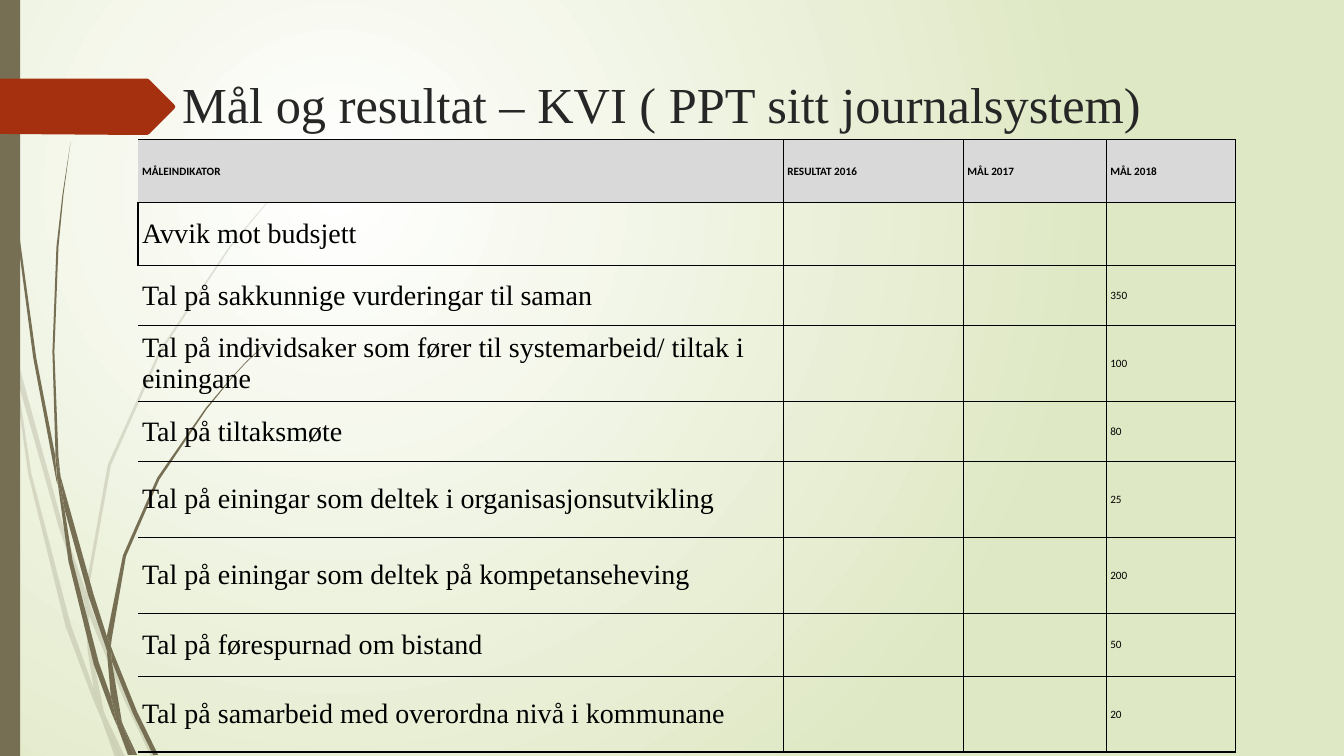
import pptx
import pptx.dml.color
import pptx.enum.shapes
import pptx.enum.text
import pptx.oxml
import pptx.oxml.ns
import pptx.util
from lxml import etree

Cm = pptx.util.Cm
Pt = pptx.util.Pt
qn = pptx.oxml.ns.qn

COLORS = {
    "glow": "FFFFFF", "meadow": "DFE8C4", "grass": "766F54", "tag": "A53010",
    "title": "262626", "ink": "000000", "header": "D9D9D9",
}
SERIF, SANS = "Times New Roman", "Calibri"
HUNDREDTH_INCH = int(Cm(2.54) / 100)

PALE_GRASS = [
    [(11, 350), (9, 322), (0, 282), (0, 299), (10, 344)],
    [(58, 522), (84, 599), (85, 586), (62, 520), (14, 345), (17, 376)],
    [(92, 607), (88, 596), (88, 610), (123, 694), (150, 751), (155, 751), (127, 692)],
    [(119, 751), (124, 751), (105, 711)],
    [(93, 683), (70, 619), (31, 469), (17, 376), (11, 350), (28, 470), (65, 621),
     (92, 693), (101, 714), (99, 707)],
    [(84, 599), (87, 646), (93, 683), (96, 692), (105, 711), (103, 706), (91, 646),
     (88, 610), (88, 608)],
    [(88, 584), (110, 462), (160, 349), (229, 245), (268, 198), (290, 175), (312, 154),
     (312, 153), (289, 175), (268, 197), (228, 244), (158, 348), (107, 461), (85, 584),
     (85, 586), (88, 596)],
    [(101, 714), (114, 751), (119, 751)],
    [(88, 608), (88, 610), (88, 596), (85, 586), (84, 599)],
    [(96, 692), (93, 683), (99, 707), (101, 714), (119, 751), (105, 711)],
]
DARK_GRASS = [
    [(7, 110), (17, 233), (33, 355), (56, 477), (57, 481), (55, 457), (55, 453), (36, 355),
     (19, 232), (8, 109), (5, 48), (4, 0), (3, 0), (4, 48)],
    [(88, 592), (106, 645), (106, 633), (106, 631), (93, 590), (60, 472), (64, 505)],
    [(113, 649), (110, 641), (111, 656), (132, 708), (152, 749), (157, 749), (136, 706)],
    [(110, 691), (98, 657), (72, 556), (64, 505), (57, 477), (68, 557), (93, 659),
     (111, 708), (117, 722), (116, 717)],
    [(60, 472), (58, 453), (54, 349), (58, 245), (63, 193), (70, 141), (62, 193), (56, 245),
     (52, 349), (55, 449)],
    [(133, 749), (136, 749), (122, 719)],
    [(57, 477), (64, 505), (60, 472), (55, 449), (55, 453)],
    [(111, 633), (125, 552), (158, 476), (205, 406), (231, 374), (245, 359), (261, 344),
     (260, 344), (245, 358), (231, 373), (204, 405), (156, 474), (122, 551), (106, 631),
     (110, 641)],
    [(117, 722), (127, 749), (131, 749)],
    [(106, 645), (110, 691), (116, 706), (122, 719), (121, 716), (111, 656), (109, 651)],
    [(106, 645), (109, 651), (111, 656), (110, 641), (106, 631), (106, 633)],
    [(116, 706), (110, 691), (116, 717), (117, 722), (130, 749), (133, 749), (122, 719)],
]
TAG_OUTLINE = [(0, 0), (146, 0), (148, 1), (173, 26), (174, 28), (173, 30), (148, 55),
               (146, 56), (136, 56), (0, 55)]

COLUMN_WIDTHS = [16.26, 4.54, 3.6, 3.25]
ROW_HEIGHTS = [1.59, 1.59, 1.51, 1.91, 1.51, 1.91, 1.91, 1.59, 1.91]
HEADINGS = ["MÅLEINDIKATOR", "RESULTAT 2016", "MÅL 2017", "MÅL 2018"]
GOALS_2018 = [
    ("Avvik mot budsjett", ""),
    ("Tal på sakkunnige vurderingar til saman", "350"),
    ("Tal på individsaker som fører til systemarbeid/ tiltak i einingane", "100"),
    ("Tal på tiltaksmøte", "80"),
    ("Tal på einingar som deltek i organisasjonsutvikling", "25"),
    ("Tal på einingar som deltek på kompetanseheving", "200"),
    ("Tal på førespurnad om bistand", "50"),
    ("Tal på samarbeid med overordna nivå i kommunane", "20"),
]


def rgb(name):
    return pptx.dml.color.RGBColor.from_string(COLORS[name])


def paint(shape, color, opacity=100):
    shape.shadow.inherit = False
    shape.fill.solid()
    shape.fill.fore_color.rgb = rgb(color)
    shape.line.fill.background()
    if opacity < 100:
        tint = shape.element.spPr.find(".//" + qn("a:srgbClr"))
        etree.SubElement(tint, qn("a:alpha"), val=str(opacity * 1000))


def style_run(run, font, size, color, bold=False):
    run.font.name = font
    run.font.size = Pt(size)
    run.font.bold = bold
    run.font.color.rgb = rgb(color)


def draw_background(slide):
    fill = slide.background.fill
    fill.gradient()
    for stop, color in zip(fill.gradient_stops, ("glow", "meadow")):
        stop.color.rgb = rgb(color)
    gradient = slide.element.find(".//" + qn("a:gradFill"))
    gradient.remove(gradient.find(qn("a:lin")))
    glow = etree.SubElement(gradient, qn("a:path"), {"path": "circle"})
    etree.SubElement(glow, qn("a:fillToRect"), l="50000", t="50000", r="100000", b="100000")


def draw_outline(slide, left, top, points, color, opacity=100):
    builder = slide.shapes.build_freeform(*points[0], scale=HUNDREDTH_INCH)
    builder.add_line_segments(points[1:], close=True)
    paint(builder.convert_to_shape(left, top), color, opacity)


def draw_side_decor(slide, left, top, height):
    for blades, opacity in ((PALE_GRASS, 20), (DARK_GRASS, 100)):
        for blade in blades:
            draw_outline(slide, left, top, blade, "grass", opacity)
    edge = slide.shapes.add_shape(
        pptx.enum.shapes.MSO_SHAPE.RECTANGLE, left, top, Cm(0.51), height)
    paint(edge, "grass")
    draw_outline(slide, left, top + Cm(1.98), TAG_OUTLINE, "tag")


def draw_title(slide, left, top, width, height):
    frame = slide.shapes.add_textbox(left, top, width, height).text_frame
    frame.word_wrap = True
    frame.vertical_anchor = pptx.enum.text.MSO_ANCHOR.TOP
    frame.text = "Mål og resultat – KVI ( PPT sitt journalsystem)"
    style_run(frame.paragraphs[0].runs[0], SERIF, 36, "title")


def border_cell(cell, has_left):
    properties = cell._tc.get_or_add_tcPr()
    for index, side in enumerate(("lnL", "lnR", "lnT", "lnB")):
        line = etree.Element(qn("a:" + side), w=str(Pt(1)))
        if side == "lnL" and not has_left:
            etree.SubElement(line, qn("a:noFill"))
        else:
            solid = etree.SubElement(line, qn("a:solidFill"))
            etree.SubElement(solid, qn("a:srgbClr"), val=COLORS["ink"])
        properties.insert(index, line)


def draw_goal_table(slide, left, top):
    rows = [HEADINGS] + [[indicator, "", "", goal] for indicator, goal in GOALS_2018]
    table = slide.shapes.add_table(
        len(rows), len(HEADINGS), left, top,
        Cm(sum(COLUMN_WIDTHS)), Cm(sum(ROW_HEIGHTS))).table
    table.first_row = False
    table.horz_banding = False
    for column, width in zip(table.columns, COLUMN_WIDTHS):
        column.width = Cm(width)
    for row, height in zip(table.rows, ROW_HEIGHTS):
        row.height = Cm(height)
    for r, texts in enumerate(rows):
        for c, text in enumerate(texts):
            cell = table.cell(r, c)
            cell.margin_left = cell.margin_right = Cm(0.1)
            cell.margin_top = cell.margin_bottom = 0
            cell.vertical_anchor = pptx.enum.text.MSO_ANCHOR.MIDDLE
            if r == 0:
                cell.fill.solid()
                cell.fill.fore_color.rgb = rgb("header")
            else:
                cell.fill.background()
            border_cell(cell, has_left=c > 0 or r == 1)
            cell.text_frame.text = text
            font, size = (SERIF, 20) if r > 0 and c == 0 else (SANS, 8)
            for run in cell.text_frame.paragraphs[0].runs:
                style_run(run, font, size, "ink", bold=r == 0)


def main():
    deck = pptx.Presentation()
    deck.slide_width = Cm(33.87)
    deck.slide_height = Cm(19.05)
    slide = deck.slides.add_slide(deck.slide_layouts[6])
    draw_background(slide)
    draw_side_decor(slide, Cm(0), Cm(0), deck.slide_height)
    draw_title(slide, Cm(4.34), Cm(1.73), Cm(26.77), Cm(3.56))
    draw_goal_table(slide, Cm(3.48), Cm(3.52))
    deck.save("out.pptx")


if __name__ == "__main__":
    main()
